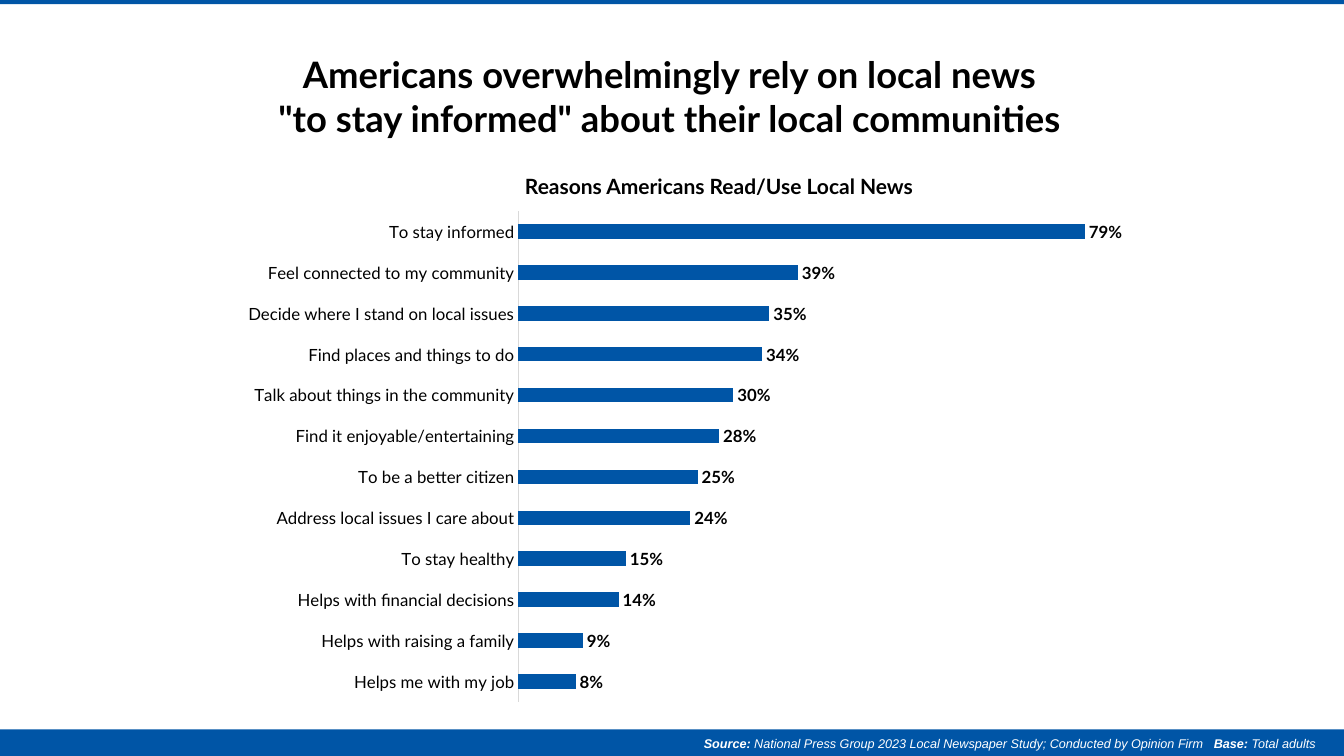
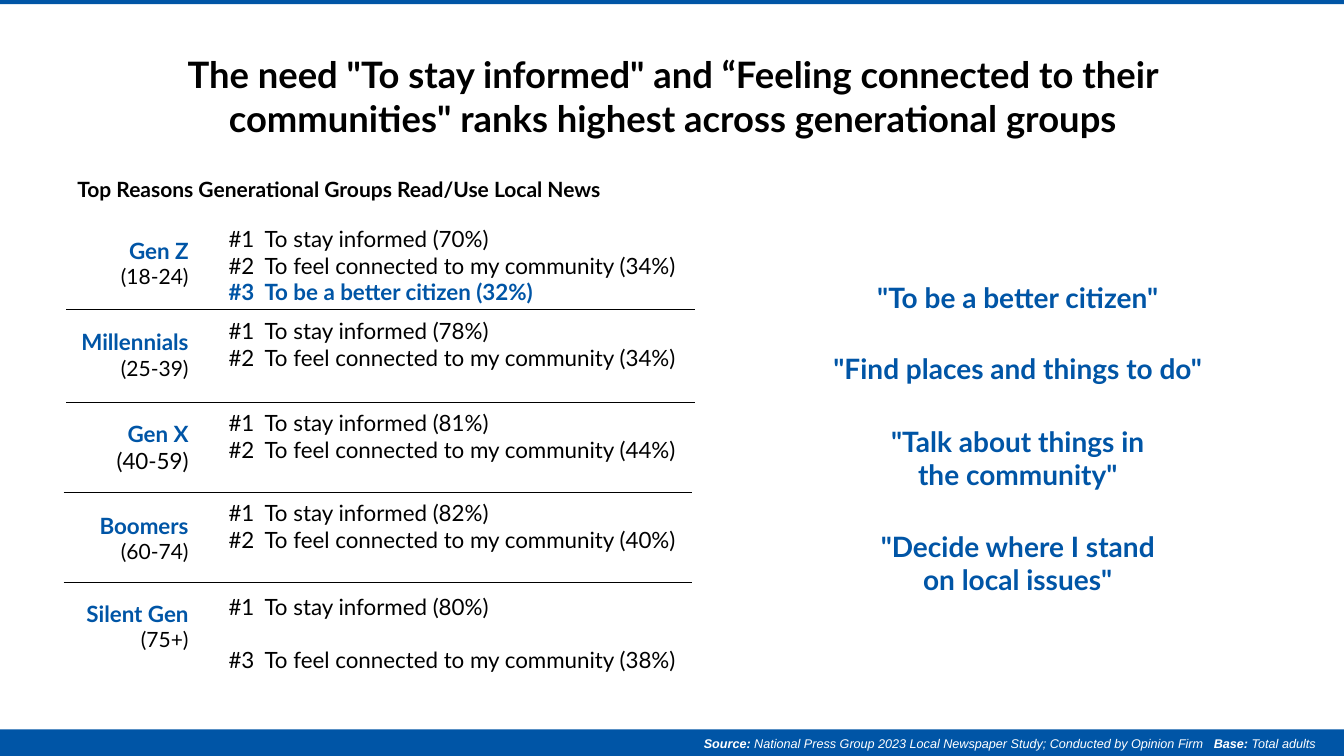
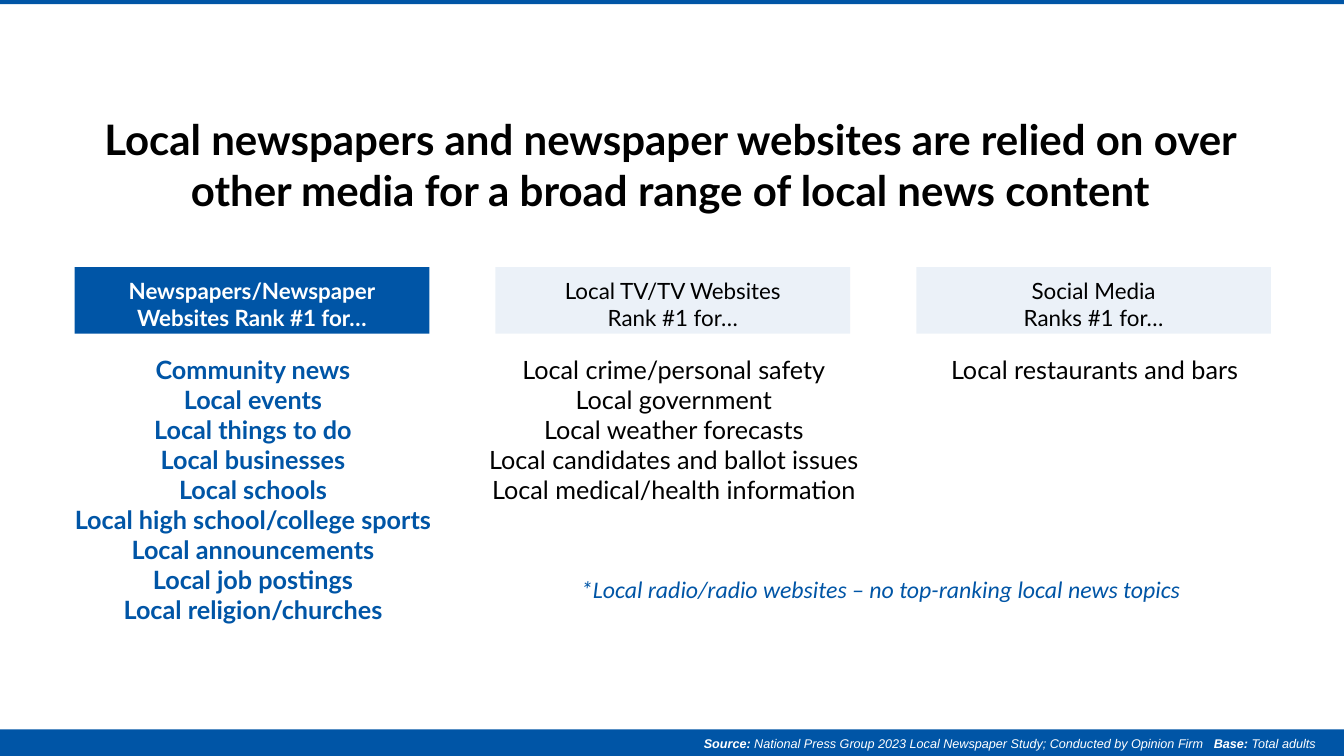
import pptx
import pptx.chart.data
import pptx.dml.color
import pptx.enum.chart
import pptx.enum.shapes
import pptx.enum.text
import pptx.oxml
import pptx.oxml.ns
import pptx.util

Pt = pptx.util.Pt
Align = pptx.enum.text.PP_ALIGN
Anchor = pptx.enum.text.MSO_ANCHOR
Rect = pptx.enum.shapes.MSO_SHAPE.RECTANGLE


class Theme:
    blue = pptx.dml.color.RGBColor.from_string("0055A6")
    black = pptx.dml.color.RGBColor.from_string("000000")
    white = pptx.dml.color.RGBColor.from_string("FFFFFF")
    gray = pptx.dml.color.RGBColor.from_string("D9D9D9")
    face = "Lato"
    small = 9
    label = 12
    head = 15
    body = 16
    topic = 18
    quote = 20
    title = 26
    large = 30


def write(slide, text, box, size=Theme.body, color=Theme.black, bold=False,
          italic=False, face=Theme.face, align=Align.LEFT, pitch=None,
          gap=0, tab=None, fill=None, alpha=None, top=3.6):
    place = [Pt(n) for n in box]
    if fill is None:
        shape = slide.shapes.add_textbox(*place)
    else:
        shape = slide.shapes.add_shape(Rect, *place)
        shape.shadow.inherit = False
        shape.fill.solid()
        shape.fill.fore_color.rgb = fill
        shape.line.fill.background()
        if alpha:
            tint = shape._element.spPr.find(".//" + pptx.oxml.ns.qn("a:srgbClr"))
            tint.append(pptx.oxml.parse_xml(
                f'<a:alpha {pptx.oxml.ns.nsdecls("a")} val="{alpha * 1000}"/>'))
    frame = shape.text_frame
    frame.word_wrap = True
    frame.margin_top = Pt(top)
    frame.vertical_anchor = Anchor.TOP if fill is None else Anchor.MIDDLE
    for i, line in enumerate(text):
        para = frame.paragraphs[0] if i == 0 else frame.add_paragraph()
        para.alignment = align
        if pitch:
            para.line_spacing = Pt(pitch)
        if gap and i:
            para.space_before = Pt(gap)
        if tab:
            para._p.get_or_add_pPr().append(pptx.oxml.parse_xml(
                f'<a:tabLst {pptx.oxml.ns.nsdecls("a")}>'
                f'<a:tab pos="{Pt(tab)}" algn="l"/></a:tabLst>'))
        for words, style in [(line, {})] if isinstance(line, str) else line:
            run = para.add_run()
            run.text = words
            run.font.name = face
            run.font.size = Pt(style.get("size", size))
            run.font.bold = style.get("bold", bold)
            run.font.italic = italic
            run.font.color.rgb = style.get("color", color)
    return shape


deck = pptx.Presentation()
deck.slide_width = Pt(960)
deck.slide_height = Pt(540)

slides = []
for title, box, size in [
    (["Americans overwhelmingly rely on local news",
      "\"to stay informed\" about their local communities"],
     (160.5, 33.8, 636, 80), Theme.title),
    (["The need \"To stay informed\" and “Feeling connected to their "
      "communities\" ranks highest across generational groups"],
     (85.5, 33.8, 791, 80), Theme.title),
    (["Local newspapers and newspaper websites are relied on over "
      "other media for a broad range of local news content"],
     (59, 77.8, 840, 80), Theme.large),
]:
    slide = deck.slides.add_slide(deck.slide_layouts[6])
    slides.append(slide)
    for y, high in [(0, 3), (521, 19)]:
        write(slide, [], (0, y, 960, high), fill=Theme.blue)
    for name, words, x, wide in [
        ("Source:", " National Press Group 2023 Local Newspaper Study; "
         "Conducted by Opinion Firm", 314, 552.5),
        ("Base:", " Total adults", 826.8, 120),
    ]:
        write(slide, [[(name, {"bold": True}), (words, {})]], (x, 522, wide, 18),
              size=Theme.small, color=Theme.white, italic=True, face="Arial",
              align=Align.RIGHT)
    write(slide, title, box, size=size, bold=True, align=Align.CENTER)

why, groups, media = slides

reasons = [
    ("Helps me with my job", 0.08),
    ("Helps with raising a family", 0.09),
    ("Helps with financial decisions", 0.14),
    ("To stay healthy", 0.15),
    ("Address local issues I care about", 0.24),
    ("To be a better citizen", 0.25),
    ("Find it enjoyable/entertaining", 0.28),
    ("Talk about things in the community", 0.3),
    ("Find places and things to do", 0.34),
    ("Decide where I stand on local issues", 0.35),
    ("Feel connected to my community", 0.39),
    ("To stay informed", 0.79),
]
data = pptx.chart.data.CategoryChartData(number_format="0%")
data.categories = [name for name, share in reasons]
data.add_series("Series 1", [share for name, share in reasons])
chart = why.shapes.add_chart(
    pptx.enum.chart.XL_CHART_TYPE.BAR_CLUSTERED,
    Pt(13.7), Pt(135.4), Pt(869.8), Pt(385.2), data).chart
chart.has_title = False
chart.has_legend = False
chart.font.name = Theme.face
chart.font.size = Pt(Theme.label)
chart.font.color.rgb = Theme.black

plot = chart.plots[0]
plot.gap_width = 182
plot.vary_by_categories = False
bars = plot.series[0]
bars.format.fill.solid()
bars.format.fill.fore_color.rgb = Theme.blue
plot.has_data_labels = True
marks = plot.data_labels
marks.show_value = True
marks.number_format = "0%"
marks.number_format_is_linked = False
marks.position = pptx.enum.chart.XL_LABEL_POSITION.OUTSIDE_END
marks.font.name = Theme.face
marks.font.size = Pt(Theme.label)
marks.font.bold = True
marks.font.color.rgb = Theme.black

names = chart.category_axis
names.major_tick_mark = pptx.enum.chart.XL_TICK_MARK.NONE
names.format.line.color.rgb = Theme.gray
names.format.line.width = Pt(0.75)
scale = chart.value_axis
scale.minimum_scale = 0
scale.maximum_scale = 0.9
scale.has_major_gridlines = False
scale.visible = False

area = chart._chartSpace.chart.plotArea
for old in area.findall(pptx.oxml.ns.qn("c:layout")):
    area.remove(old)
area.insert(0, pptx.oxml.parse_xml(
    f'<c:layout {pptx.oxml.ns.nsdecls("c")}><c:manualLayout>'
    '<c:layoutTarget val="inner"/><c:xMode val="edge"/><c:yMode val="edge"/>'
    '<c:x val="0.41"/><c:y val="0.04"/><c:w val="0.53"/><c:h val="0.91"/>'
    '</c:manualLayout></c:layout>'))
write(why, ["Reasons Americans Read/Use Local News"], (270.7, 120.2, 486, 29.5),
      size=Theme.head, bold=True, align=Align.CENTER)

write(groups, ["Top Reasons Generational Groups Read/Use Local News"],
      (48.2, 122.4, 411, 42.5), size=Theme.head, bold=True)
stay = "#1\tTo stay informed "
feel = "\tTo feel connected to my community "
extra = [("#3\tTo be a better citizen (32%)", {"bold": True, "color": Theme.blue})]
for name, age, size, y, top, gap, lines in [
    ("Gen Z", "(18-24)", Theme.head, 165.6, 157, 0,
     [stay + "(70%)", "#2" + feel + "(34%)", extra]),
    ("Millennials", "(25-39)", Theme.head, 231.1, 223.2, 0,
     [stay + "(78%)", "#2" + feel + "(34%)"]),
    ("Gen X", "(40-59)", Theme.body, 296.6, 288.7, 0,
     [stay + "(81%)", "#2" + feel + "(44%)"]),
    ("Boomers", "(60-74)", Theme.head, 362.2, 352.8, 0,
     [stay + "(82%)", "#2" + feel + "(40%)"]),
    ("Silent Gen", "(75+)", Theme.head, 424.8, 419.8, 19.2,
     [stay + "(80%)", "#3" + feel + "(38%)"]),
]:
    write(groups, [[(name, {"bold": True, "color": Theme.blue})],
                   [(age, {"size": size})]],
          (41.8, y, 100, 49.7), align=Align.RIGHT)
    write(groups, lines, (156.2, top, 385, 65.5), gap=gap, tab=25.7)

for x, y in [(47.5, 221), (47.5, 287.3), (45.4, 351.4), (45.4, 416.2)]:
    rule = groups.shapes.add_connector(
        pptx.enum.shapes.MSO_CONNECTOR.STRAIGHT, Pt(x), Pt(y), Pt(x + 449), Pt(y))
    rule.line.color.rgb = Theme.black
    rule.line.width = Pt(0.5)
    rule._element.spPr.append(pptx.oxml.parse_xml(
        f'<a:effectLst {pptx.oxml.ns.nsdecls("a")}/>'))

for y, lines in [
    (196.6, ["\"To be a better citizen\""]),
    (247.5, ["\"Find places and things to do\""]),
    (299.5, ["\"Talk about things in", "the community\""]),
    (374.4, ["\"Decide where I stand", "on local issues\""]),
]:
    write(groups, lines, (567, y, 320, 42.5), size=Theme.quote, color=Theme.blue,
          bold=True, align=Align.CENTER)

for i, (head, topics) in enumerate([
    (["Newspapers/Newspaper", "Websites Rank #1 for…"],
     ["Community news", "Local events", "Local things to do",
      "Local businesses", "Local schools", "Local high school/college sports",
      "Local announcements", "Local job postings", "Local religion/churches"]),
    (["Local TV/TV Websites", "Rank #1 for…"],
     ["Local crime/personal safety", "Local government",
      "Local weather forecasts", "Local candidates and ballot issues",
      "Local medical/health information"]),
    (["Social Media", "Ranks #1 for…"], ["Local restaurants and bars"]),
]):
    first = i == 0
    x = 53.3 + i * 300.6
    write(media, head, (x, 190.8, 253.4, 47.5), bold=first, align=Align.CENTER,
          color=Theme.white if first else Theme.black, fill=Theme.blue,
          alpha=None if first else 8, top=9.4)
    write(media, topics, (x - 33.9, 249.8, 322.6, 7.2 + 21.4 * len(topics)),
          size=Theme.topic, color=Theme.blue if first else Theme.black,
          bold=first, align=Align.CENTER, pitch=21.4)

write(media, ["*Local radio/radio websites – no top-ranking local news topics"],
      (380.9, 406, 496.8, 28), size=17, color=Theme.blue, italic=True,
      face="Calibri", align=Align.CENTER, pitch=21.4)

deck.save("out.pptx")
